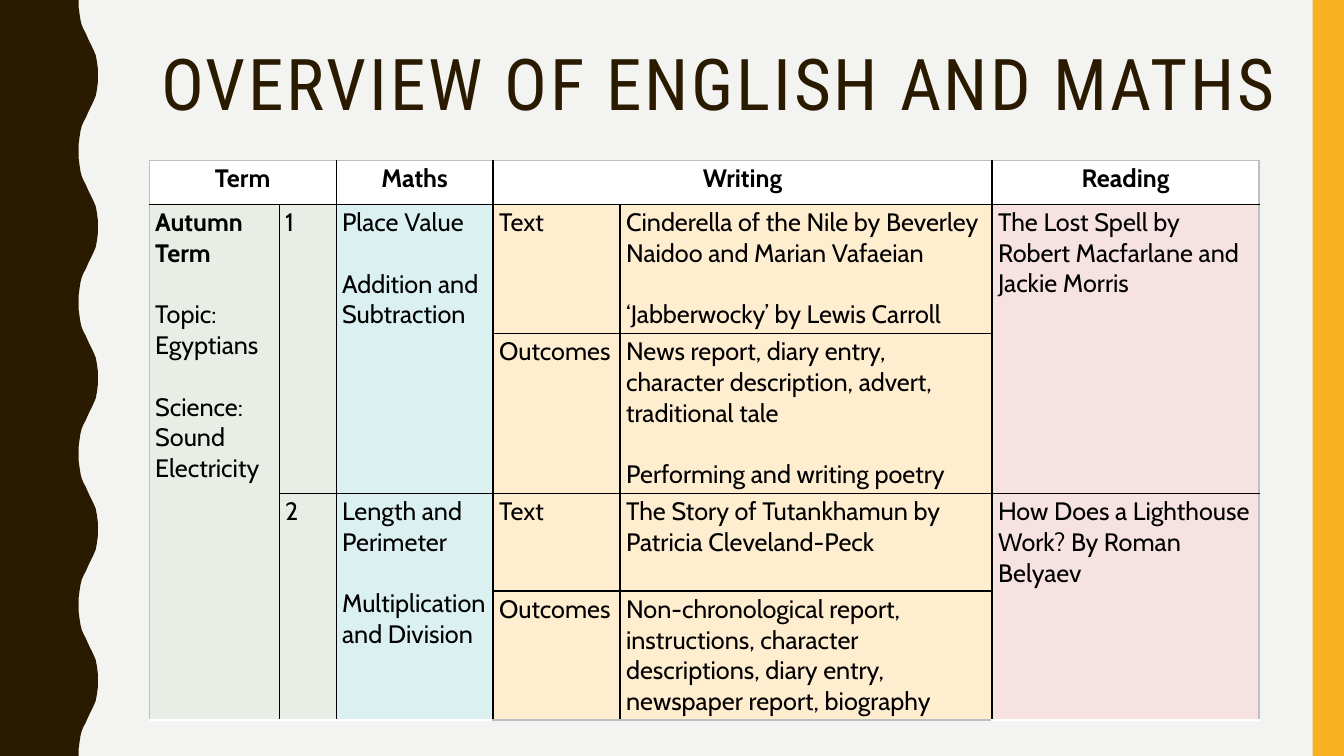
from lxml import etree
from pptx import Presentation
from pptx.dml.color import RGBColor
from pptx.enum.shapes import MSO_SHAPE
from pptx.enum.text import MSO_ANCHOR, MSO_AUTO_SIZE, PP_ALIGN
from pptx.oxml.ns import qn
from pptx.util import Inches, Pt

RECTANGLE = MSO_SHAPE.RECTANGLE
TOP = MSO_ANCHOR.TOP
NO_AUTOFIT = MSO_AUTO_SIZE.NONE
CENTER, LEFT = PP_ALIGN.CENTER, PP_ALIGN.LEFT

BROWN = RGBColor(0x2A, 0x1A, 0x00)
AMBER = RGBColor(0xF8, 0xB3, 0x23)
PAPER = RGBColor(0xF3, 0xF3, 0xF2)
BLACK = RGBColor(0x00, 0x00, 0x00)
WHITE = RGBColor(0xFF, 0xFF, 0xFF)
GREY = RGBColor(0xBF, 0xBF, 0xBF)
GREEN = RGBColor(0xE8, 0xEE, 0xE5)
BLUE = RGBColor(0xDA, 0xF0, 0xF1)
CREAM = RGBColor(0xFF, 0xED, 0xD0)
PINK = RGBColor(0xF6, 0xE2, 0xE1)

COLUMN_WIDTHS = [9.67, 4.24, 11.68, 9.45, 27.68, 19.87]
ROW_HEIGHTS = [5.8, 16.9, 21.1, 12.95, 16.9]
HALF_WAVE = [(0, 0), (0, 9), (5, 19), (10, 27), (16, 33), (26, 39), (37, 44),
             (47, 50), (58, 56), (68, 61), (79, 67), (89, 73), (95, 81),
             (100, 91), (100, 100)]

CELLS = [
    (0, 0, 1, 2, WHITE, ["Term"]),
    (0, 2, 1, 1, WHITE, ["Maths"]),
    (0, 3, 1, 2, WHITE, ["Writing"]),
    (0, 5, 1, 1, WHITE, ["Reading"]),
    (1, 0, 4, 1, GREEN, ["Autumn Term", "Topic:\nEgyptians",
                         "Science:\nSound\nElectricity"]),
    (1, 1, 2, 1, GREEN, ["1"]),
    (1, 2, 2, 1, BLUE, ["Place Value", "Addition and Subtraction"]),
    (1, 3, 1, 1, CREAM, ["Text"]),
    (1, 4, 1, 1, CREAM, [
        "Cinderella of the Nile by Beverley Naidoo and Marian Vafaeian",
        "‘Jabberwocky’ by Lewis Carroll"]),
    (1, 5, 2, 1, PINK, ["The Lost Spell by Robert Macfarlane and Jackie Morris"]),
    (2, 3, 1, 1, CREAM, ["Outcomes"]),
    (2, 4, 1, 1, CREAM, [
        "News report, diary entry, character description, advert, traditional tale",
        "Performing and writing poetry"]),
    (3, 1, 2, 1, GREEN, ["2"]),
    (3, 2, 2, 1, BLUE, ["Length and Perimeter", "Multiplication and Division"]),
    (3, 3, 1, 1, CREAM, ["Text"]),
    (3, 4, 1, 1, CREAM, ["The Story of Tutankhamun by Patricia Cleveland-Peck"]),
    (3, 5, 2, 1, PINK, ["How Does a Lighthouse Work? By Roman Belyaev"]),
    (4, 3, 1, 1, CREAM, ["Outcomes"]),
    (4, 4, 1, 1, CREAM, [
        "Non-chronological report, instructions, character descriptions, "
        "diary entry, newspaper report, biography"]),
]


class SlideBuilder:
    """Draws styled elements on one slide, with lengths in percent of its size."""

    heading_font = "Roboto Condensed"
    body_font = "Cabin"
    body_size = Pt(18)
    paragraph_gap = Pt(22)

    def __init__(self, presentation):
        self.width = presentation.slide_width
        self.height = presentation.slide_height
        self.slide = presentation.slides.add_slide(presentation.slide_layouts[5])
        self.slide.background.fill.solid()
        self.slide.background.fill.fore_color.rgb = PAPER

    def across(self, percent):
        return round(self.width * percent / 100)

    def down(self, percent):
        return round(self.height * percent / 100)

    def box(self, left, top, width, height):
        return (self.across(left), self.down(top),
                self.across(width), self.down(height))

    def paint(self, shape, color):
        shape.shadow.inherit = False
        shape.fill.solid()
        shape.fill.fore_color.rgb = color
        shape.line.fill.background()

    def wavy_edge(self, trough, crest, waves, color):
        half_height = 50 / waves
        points = []
        for wave in range(waves):
            start = 2 * wave * half_height
            rising = [(x, start + y * half_height / 100) for x, y in HALF_WAVE]
            falling = [(x, 2 * (start + half_height) - y)
                       for x, y in reversed(rising)]
            points += rising + falling[1:]
        outline = [(self.across(trough + (crest - trough) * x / 100), self.down(y))
                   for x, y in points]
        builder = self.slide.shapes.build_freeform(0, 0)
        builder.add_line_segments(outline + [(0, self.height)], close=True)
        self.paint(builder.convert_to_shape(), color)

    def bar(self, left, top, width, height, color):
        shape = self.slide.shapes.add_shape(
            RECTANGLE, *self.box(left, top, width, height))
        self.paint(shape, color)

    def title(self, text, left, top, width, height):
        shape = self.slide.shapes.title
        shape.left, shape.top, shape.width, shape.height = self.box(
            left, top, width, height)
        frame = shape.text_frame
        frame.word_wrap = True
        frame.auto_size = NO_AUTOFIT
        frame.vertical_anchor = TOP
        paragraph = frame.paragraphs[0]
        paragraph.alignment = CENTER
        paragraph.line_spacing = 0.9
        run = self.add_run(paragraph, text, self.heading_font, Pt(51), BROWN)
        run.font._element.set("spc", "200")

    def add_run(self, paragraph, text, font, size, color, bold=False):
        run = paragraph.add_run()
        run.text = text
        run.font.name = font
        run.font.size = size
        run.font.color.rgb = color
        run.font.bold = bold
        return run

    def table(self, left, top, widths, heights, cells):
        frame = self.slide.shapes.add_table(
            len(heights), len(widths),
            *self.box(left, top, sum(widths), sum(heights)))
        table = frame.table
        table.first_row = table.horz_banding = False
        for column, width in zip(table.columns, widths):
            column.width = self.across(width)
        for row, height in zip(table.rows, heights):
            row.height = self.down(height)
        for row, column, row_span, column_span, color, texts in cells:
            last_row, last_column = row + row_span - 1, column + column_span - 1
            origin = table.cell(row, column)
            if row_span * column_span > 1:
                origin.merge(table.cell(last_row, last_column))
            for r in range(row, last_row + 1):
                for c in range(column, last_column + 1):
                    edges = [("lnL", c == column, c == 0),
                             ("lnR", c == last_column, c == len(widths) - 1),
                             ("lnT", r == row, r == 0),
                             ("lnB", r == last_row, r == len(heights) - 1)]
                    self.cell_style(table.cell(r, c), edges, color)
            self.cell_text(origin, texts, is_header=row == 0)

    def cell_style(self, cell, edges, color):
        properties = cell._tc.get_or_add_tcPr()
        for tag, on_edge, is_outer in edges:
            if on_edge:
                line = etree.SubElement(properties, qn("a:" + tag), w=str(Pt(1)))
                fill = etree.SubElement(line, qn("a:solidFill"))
                etree.SubElement(fill, qn("a:srgbClr"),
                                 val=str(GREY if is_outer else BLACK))
        cell.fill.solid()
        cell.fill.fore_color.rgb = color
        cell.margin_left = cell.margin_right = Inches(0.06)
        cell.margin_top = cell.margin_bottom = Inches(0.03)
        cell.vertical_anchor = TOP

    def cell_text(self, cell, texts, is_header):
        frame = cell.text_frame
        for index, text in enumerate(texts):
            paragraph = frame.add_paragraph() if index else frame.paragraphs[0]
            paragraph.alignment = CENTER if is_header else LEFT
            paragraph.space_before = self.paragraph_gap if index else Pt(0)
            for number, line in enumerate(text.split("\n")):
                if number:
                    paragraph.add_line_break()
                self.add_run(paragraph, line, self.body_font, self.body_size,
                             BLACK, is_header or text == "Autumn Term")


def main():
    presentation = Presentation()
    presentation.slide_width = Inches(13.33)
    presentation.slide_height = Inches(7.5)
    builder = SlideBuilder(presentation)
    builder.wavy_edge(5.85, 7.28, 5, BROWN)
    builder.bar(97.67, 0, 2.33, 100, AMBER)
    builder.title("OVERVIEW OF ENGLISH AND MATHS", 10.35, 5.73, 86.27, 15)
    builder.table(11.1, 21.2, COLUMN_WIDTHS, ROW_HEIGHTS, CELLS)
    presentation.save("out.pptx")


if __name__ == "__main__":
    main()
